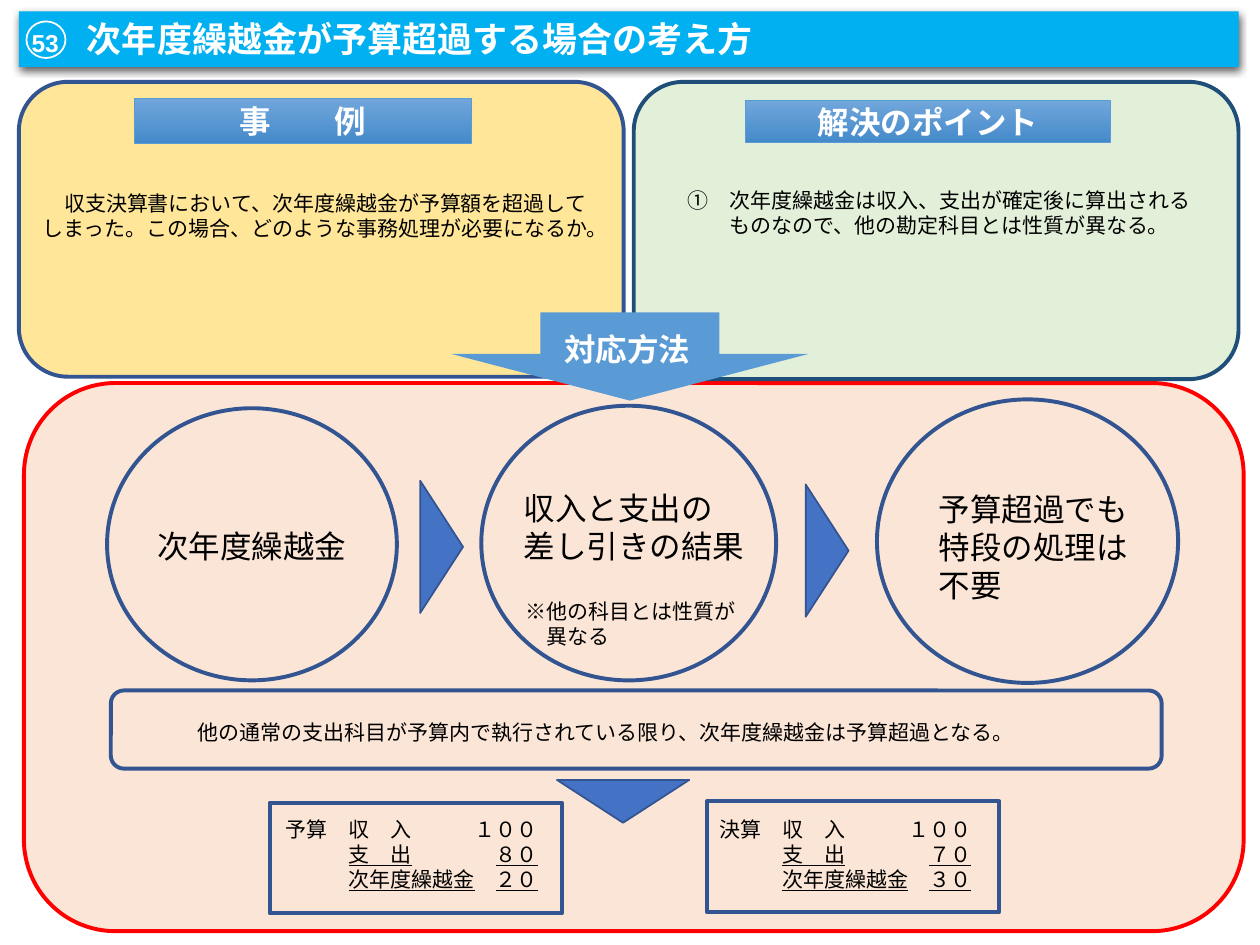
from lxml.etree import SubElement
from pptx import Presentation
from pptx.dml.color import RGBColor
from pptx.enum.shapes import MSO_SHAPE
from pptx.enum.text import MSO_ANCHOR, MSO_AUTO_SIZE, PP_ALIGN
from pptx.oxml.ns import qn
from pptx.util import Inches, Pt

COLORS = {
    "black": "000000", "white": "FFFFFF", "red": "FF0000", "title": "00B0F0",
    "yellow": "FFE699", "green": "E2F0D9", "peach": "FBE5D6",
    "navy": "325491", "dark": "1F4E79", "sky": "5B9BD5", "blue": "4472C4",
    "sky_top": "71A6DB", "sky_bottom": "448ACA",
}
CJK = "Noto Sans CJK JP"

NUMBER, TITLE = "53", "次年度繰越金が予算超過する場合の考え方"

# place, fill, line
PANELS = [
    ((0.19, 3.04, 9.68, 4.35), "peach", "red"),
    ((5.03, 0.65, 4.8, 2.36), "green", "dark"),
    ((0.15, 0.65, 4.8, 2.34), "yellow", "navy"),
]
HEADINGS = [
    ("解決のポイント", (5.92, 0.8, 2.89, 0.33)),
    ("事　　例", (1.07, 0.78, 2.67, 0.36)),
]
# text, place, fill, left margin, first-line indent
BODIES = [
    ("①\t次年度繰越金は収入、支出が確定後に算出される\vものなので、他の勘定科目とは性質が異なる。",
     (5.36, 1.44, 4.31, 0.5), "green", 0.33, -0.33),
    ("収支決算書において、次年度繰越金が予算額を超過してしまった。"
     "この場合、どのような事務処理が必要になるか。",
     (0.24, 1.46, 4.62, 0.5), "yellow", 0, 0.17),
    ("※他の科目とは性質が\v異なる", (4.07, 4.7, 2.01, 0.5), None, 0.17, -0.17),
]
# circle place, text place, lines
STEPS = [
    ((0.85, 3.24, 2.3, 2.16), (1.15, 4.13, 1.79, 0.4), ["次年度繰越金"]),
    ((3.82, 3.22, 2.34, 2.18), (4.06, 3.83, 1.95, 0.71), ["収入と支出の", "差し引きの結果"]),
    ((6.96, 3.17, 2.39, 2.25), (7.35, 3.84, 1.75, 0.96), ["予算超過でも特段の処理は", "不要"]),
]
# left, top, rotation
POINTERS = [(2.98, 4.17, 270), (6.04, 4.2, 270), (4.42, 6.19, 0)]
CONCLUSION = "他の通常の支出科目が予算内で執行されている限り、次年度繰越金は予算超過となる。"
# name, income, expense, carried over, frame left, frame top, text left
ACCOUNTS = [
    ("予算", "１００", "８０", "２０", 2.14, 6.37, 2.17),
    ("決算", "１００", "７０", "３０", 5.61, 6.36, 5.61),
]


def rgb(name):
    return RGBColor.from_string(COLORS[name])


def set_font(p, size, color="black", bold=False, name="Arial"):
    f = p.font
    f.size, f.bold, f.name = Pt(size), bold, name
    f.color.rgb = rgb(color)
    SubElement(p._p.pPr.find(qn("a:defRPr")), qn("a:ea"), typeface=CJK)


def set_tabs(p, *stops):
    """Add tab stops given as (inches, alignment); call before set_font."""
    tabs = SubElement(p._p.get_or_add_pPr(), qn("a:tabLst"))
    for pos, align in stops:
        SubElement(tabs, qn("a:tab"), pos=str(Inches(pos)), algn=align)


def add_box(s, kind, place, fill=None, line=None, width=2.25):
    sp = s.shapes.add_shape(kind, *map(Inches, place))
    sp.shadow.inherit = False
    if fill:
        sp.fill.solid()
        sp.fill.fore_color.rgb = rgb(fill)
    else:
        sp.fill.background()
    if line:
        sp.line.color.rgb = rgb(line)
        sp.line.width = Pt(width)
    else:
        sp.line.fill.background()
    return sp


def add_text(s, lines, place, size, fill=None, **font):
    """Add a wrapped text box with one paragraph per line; return its paragraphs."""
    sp = s.shapes.add_textbox(*map(Inches, place))
    if fill:
        sp.fill.solid()
        sp.fill.fore_color.rgb = rgb(fill)
    tf = sp.text_frame
    tf.word_wrap = True
    for i, line in enumerate(lines):
        p = tf.add_paragraph() if i else tf.paragraphs[0]
        p.text = line
        set_font(p, size, **font)
    return tf.paragraphs


def add_title(s):
    sp = s.shapes.title
    sp.left, sp.top, sp.width, sp.height = map(Inches, (0.15, 0.09, 9.68, 0.44))
    sp.fill.solid()
    sp.fill.fore_color.rgb = rgb("title")
    sp.shadow.inherit = False
    shadow = SubElement(sp._element.spPr.find(qn("a:effectLst")), qn("a:outerShdw"),
                        blurRad=str(Pt(4.5)), dist=str(Pt(1.5)), dir="5400000")
    color = SubElement(shadow, qn("a:srgbClr"), val=COLORS["black"])
    SubElement(color, qn("a:alpha"), val="63000")
    tf = sp.text_frame
    tf.auto_size = MSO_AUTO_SIZE.NONE
    tf.vertical_anchor = MSO_ANCHOR.TOP
    p = tf.paragraphs[0]
    p.alignment = PP_ALIGN.LEFT
    set_tabs(p, (0.44, "l"))
    set_font(p, 20, "white", True)
    r = p.add_run()
    r.text = NUMBER
    r.font.size = Pt(14)
    p.add_run().text = "\t" + TITLE
    add_box(s, MSO_SHAPE.OVAL, (0.21, 0.17, 0.31, 0.29), line="white", width=1)


def add_heading(s, text, place):
    sp = add_box(s, MSO_SHAPE.RECTANGLE, place, line="sky", width=0.5)
    sp.fill.gradient()
    sp.fill.gradient_angle = 270
    for stop, color in zip(sp.fill.gradient_stops, ("sky_top", "sky_bottom")):
        stop.color.rgb = rgb(color)
    tf = sp.text_frame
    tf.vertical_anchor = MSO_ANCHOR.MIDDLE
    p = tf.paragraphs[0]
    p.text = text
    p.alignment = PP_ALIGN.CENTER
    set_font(p, 18, "white", True)


def add_account(s, name, income, expense, carried, left, top, text_left):
    add_box(s, MSO_SHAPE.RECTANGLE, (left, top, 2.32, 0.88), line="navy")
    rows = [(name, "収　入", income), ("", "支　出", expense), ("", "次年度繰越金", carried)]
    sp = s.shapes.add_textbox(*map(Inches, (text_left, 6.43, 2.32, 0.71)))
    tf = sp.text_frame
    tf.word_wrap = True
    for i, (label, item, amount) in enumerate(rows):
        p = tf.add_paragraph() if i else tf.paragraphs[0]
        set_tabs(p, (0.5, "l"), (2, "r"))
        set_font(p, 12, name=CJK)
        p.add_run().text = label + "\t"
        r = p.add_run()
        r.text = f"{item}\t{amount}"
        r.font.underline = i > 0


def main():
    prs = Presentation()
    prs.slide_width, prs.slide_height = Inches(10), Inches(7.5)
    s = prs.slides.add_slide(prs.slide_layouts[5])
    add_title(s)
    for place, fill, line in PANELS:
        add_box(s, MSO_SHAPE.ROUNDED_RECTANGLE, place, fill, line)
    for text, place in HEADINGS:
        add_heading(s, text, place)
    for text, place, fill, margin, indent in BODIES:
        p = add_text(s, [text], place, 12, fill)[0]
        pPr = p._p.get_or_add_pPr()
        pPr.set("marL", str(Inches(margin)))
        pPr.set("indent", str(Inches(indent)))

    arrow = add_box(s, MSO_SHAPE.DOWN_ARROW, (3.58, 2.48, 2.84, 0.7), "sky")
    arrow.adjustments[0], arrow.adjustments[1] = 0.5, 0.53
    add_text(s, ["対応方法"], (4.38, 2.57, 1.24, 0.4), 18, "sky", color="white", bold=True)

    for circle, place, lines in STEPS:
        add_box(s, MSO_SHAPE.OVAL, circle, line="navy")
        add_text(s, lines, place, 18)
    for left, top, rotation in POINTERS:
        sp = add_box(s, MSO_SHAPE.FLOWCHART_MERGE, (left, top, 1.05, 0.34), "blue", "navy", 1)
        sp.rotation = rotation

    add_box(s, MSO_SHAPE.ROUNDED_RECTANGLE, (0.88, 5.48, 8.34, 0.62), line="navy")
    add_text(s, [CONCLUSION], (1.47, 5.66, 7.29, 0.3), 12, name=CJK)
    for account in ACCOUNTS:
        add_account(s, *account)
    prs.save("out.pptx")


if __name__ == "__main__":
    main()
